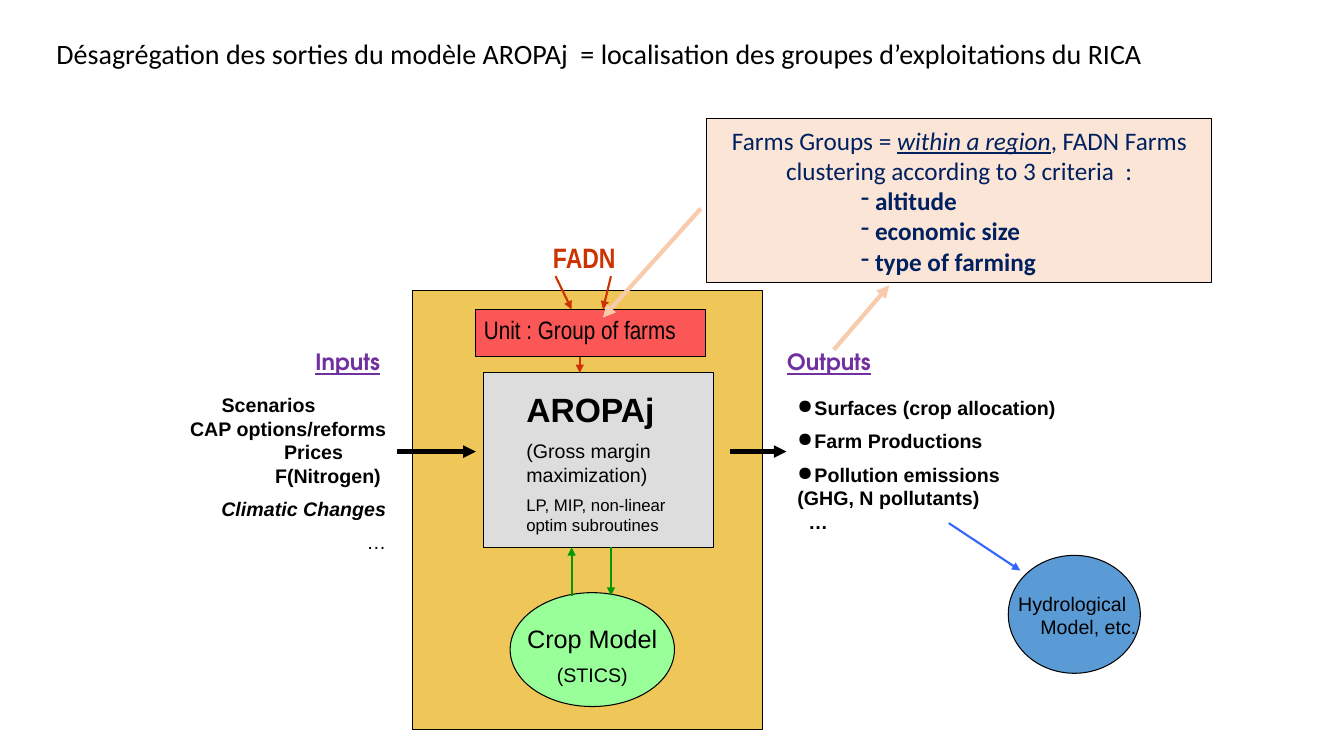
from lxml import etree
from pptx import Presentation
from pptx.dml.color import RGBColor
from pptx.enum.shapes import MSO_CONNECTOR, MSO_SHAPE
from pptx.enum.text import MSO_ANCHOR, MSO_AUTO_SIZE, PP_ALIGN
from pptx.oxml.ns import qn
from pptx.util import Inches, Pt

LEFT, CENTER, RIGHT = PP_ALIGN.LEFT, PP_ALIGN.CENTER, PP_ALIGN.RIGHT
TOP, MIDDLE = MSO_ANCHOR.TOP, MSO_ANCHOR.MIDDLE
RECT, OVAL = MSO_SHAPE.RECTANGLE, MSO_SHAPE.OVAL

BLACK = RGBColor(0x00, 0x00, 0x00)
GOLD = RGBColor(0xEE, 0xC7, 0x58)
GRAY = RGBColor(0xDD, 0xDD, 0xDD)
MINT = RGBColor(0x99, 0xFF, 0x99)
GREEN = RGBColor(0x00, 0x99, 0x00)
WATER = RGBColor(0x5B, 0x9B, 0xD5)
BLUE = RGBColor(0x33, 0x66, 0xFF)
NAVY = RGBColor(0x00, 0x20, 0x60)
CORAL = RGBColor(0xFB, 0x57, 0x57)
BRICK = RGBColor(0xCC, 0x33, 0x00)
PURPLE = RGBColor(0x70, 0x30, 0xA0)
CREAM = RGBColor(0xFB, 0xE5, 0xD6)
PEACH = RGBColor(0xF8, 0xCB, 0xAD)

TITLE = "Désagrégation des sorties du modèle AROPAj  = localisation des groupes d’exploitations du RICA"

# Each paragraph: text, then the settings that differ from its block's own
UNIT = [("Unit : Group of farms", {})]
AROPAJ = [
    ("AROPAj", dict(size=24, bold=True)),
    ("(Gross margin maximization)", dict(size=14, before=7)),
    ("LP, MIP, non-linear optim subroutines", dict(size=12, before=6)),
]
CROP_MODEL = [("Crop Model", dict(size=18)), ("(STICS)", dict(before=7))]
FARM_GROUPS = [
    ([("Farms Groups = ", False), ("within a region", True),
      (", FADN Farms clustering according to 3 criteria  :", False)],
     dict(align=CENTER)),
] + [(criterion, dict(bold=True, bullet="-", indent=1.57, hang=0.14))
     for criterion in ("altitude", "economic size", "type of farming")]
INPUTS = [
    ("Scenarios", dict(indent=0.33)),
    ("CAP options/reforms", dict(align=RIGHT)),
    ("Prices", dict(indent=0.95)),
    ("F(Nitrogen)", dict(indent=0.86)),
    ("Climatic Changes", dict(align=RIGHT, italic=True, before=7)),
    ("…", dict(align=RIGHT, bold=False, before=7)),
]
DOT = dict(bullet="●", indent=0.17, hang=0.17)
OUTPUTS = [
    ("Surfaces (crop allocation)", DOT),
    ("Farm Productions", dict(DOT, before=7)),
    ("Pollution emissions", dict(DOT, before=7)),
    ("(GHG, N pollutants)", {}),
    ("…", dict(indent=0.11)),
]
HYDROLOGY = [("Hydrological", {}), ("Model, etc.", dict(indent=0.22))]

HEADING = dict(font="TeX Gyre Adventor", size=16, color=PURPLE, bold=True, underline=True)
NARROW = dict(font="Arial Narrow", size=18)
CALLOUT = dict(font="Calibri", size=18, color=NAVY)

# preset, box, fill, paragraphs, text defaults, insets, anchor
INSETS = (0.1, 0.05, 0.1, 0.05)
BLOCKS = [
    (RECT, (4.09, 2.88, 3.47, 4.36), GOLD, [], {}, INSETS, TOP),
    (RECT, (4.8, 3.7, 2.28, 1.73), GRAY, AROPAJ, {}, (0.42, 0.16, 0.33, 0), TOP),
    (OVAL, (5.06, 5.88, 1.63, 1.13), MINT, CROP_MODEL, dict(align=CENTER), (0, 0.1, 0, 0), MIDDLE),
    (OVAL, (10, 5.51, 1.31, 1.17), WATER, [], {}, INSETS, TOP),
    (RECT, (4.72, 3.07, 2.28, 0.47), CORAL, UNIT, NARROW, (0.08, 0.05, 0, 0), TOP),
    (RECT, (7.01, 1.18, 5.01, 1.62), CREAM, FARM_GROUPS, CALLOUT, INSETS, MIDDLE),
]
# box, paragraphs, text defaults
LABELS = [
    ((3.03, 3.4, 1.2, 0.37), [("Inputs", {})], HEADING),
    ((7.71, 3.4, 1.4, 0.37), [("Outputs", {})], HEADING),
    ((1.77, 3.85, 2.16, 1.75), INPUTS, dict(bold=True)),
    ((7.81, 3.88, 2.84, 1.51), OUTPUTS, dict(bold=True)),
    ((10, 5.82, 1.42, 0.57), HYDROLOGY, {}),
    ((4.77, 2.34, 2.05, 0.44), [("FADN", {})],
     dict(font="Arial Narrow", size=20, color=BRICK, bold=True, align=CENTER)),
]
# from x, from y, to x, to y, colour, width
ARROWS = [
    (3.94, 4.48, 4.72, 4.48, BLACK, 3),
    (7.24, 4.48, 7.8, 4.48, BLACK, 3),
    (5.67, 5.91, 5.67, 5.43, GREEN, 1.5),
    (6.06, 5.43, 6.06, 5.91, GREEN, 1.5),
    (9.41, 5.19, 10.12, 5.66, BLUE, 1.5),
    (5.75, 3.54, 5.75, 3.7, BRICK, 1.5),
    (5.51, 2.74, 5.67, 3.07, BRICK, 1.5),
    (6.06, 2.74, 5.98, 3.07, BRICK, 1.5),
    (6.95, 2.07, 5.98, 3.15, PEACH, 3),
    (8.27, 3.47, 8.82, 2.83, PEACH, 3),
]


def inches(values):
    return [Inches(value) for value in values]


def format_paragraph(paragraph, font="Arial", size=14, color=BLACK, bold=False, italic=None,
                     underline=None, align=LEFT, before=0, indent=0, hang=0, bullet=None):
    paragraph.alignment = align
    paragraph.space_before = Pt(before)
    face = paragraph.font
    face.name, face.size, face.bold = font, Pt(size), bold
    face.italic, face.underline = italic, underline
    face.color.rgb = color
    properties = paragraph._p.get_or_add_pPr()
    properties.set("marL", str(Inches(indent)))
    properties.set("indent", str(-Inches(hang)))
    if bullet:
        mark = etree.Element(qn("a:buChar"), char=bullet)
        properties.find(qn("a:defRPr")).addprevious(mark)


def write(frame, paragraphs, defaults, insets=INSETS, anchor=TOP):
    frame.word_wrap = True
    frame.vertical_anchor = anchor
    frame.margin_left, frame.margin_top, frame.margin_right, frame.margin_bottom = inches(insets)
    for number, (content, settings) in enumerate(paragraphs):
        paragraph = frame.add_paragraph() if number else frame.paragraphs[0]
        pieces = [(content, False)] if isinstance(content, str) else content
        for text, stressed in pieces:
            run = paragraph.add_run()
            run.text = text
            if stressed:
                run.font.italic = run.font.underline = True
        format_paragraph(paragraph, **{**defaults, **settings})


def add_block(slide, preset, box, fill, paragraphs, defaults, insets, anchor):
    block = slide.shapes.add_shape(preset, *inches(box))
    block.shadow.inherit = False
    block.fill.solid()
    block.fill.fore_color.rgb = fill
    block.line.color.rgb = BLACK
    block.line.width = Pt(0.75)
    write(block.text_frame, paragraphs, defaults, insets, anchor)
    if preset == OVAL:
        block.text_frame.word_wrap = False


def add_arrow(slide, x1, y1, x2, y2, color, width):
    arrow = slide.shapes.add_connector(MSO_CONNECTOR.STRAIGHT, *inches((x1, y1, x2, y2)))
    arrow.line.color.rgb = color
    arrow.line.width = Pt(width)
    etree.SubElement(arrow.line._get_or_add_ln(), qn("a:tailEnd"), type="triangle")
    etree.SubElement(arrow._element.spPr, qn("a:effectLst"))


def main():
    deck = Presentation()
    deck.slide_width, deck.slide_height = Inches(13.33), Inches(7.5)
    slide = deck.slides.add_slide(deck.slide_layouts[5])
    title = slide.shapes.title
    title.left, title.top, title.width, title.height = inches((0.46, 0.31, 12.33, 0.44))
    title.text_frame.auto_size = MSO_AUTO_SIZE.NONE
    write(title.text_frame, [(TITLE, {})], dict(font="Calibri", size=20))
    for block in BLOCKS:
        add_block(slide, *block)
    for box, paragraphs, defaults in LABELS:
        write(slide.shapes.add_textbox(*inches(box)).text_frame, paragraphs, defaults)
    for arrow in ARROWS:
        add_arrow(slide, *arrow)
    deck.save("out.pptx")


if __name__ == "__main__":
    main()
